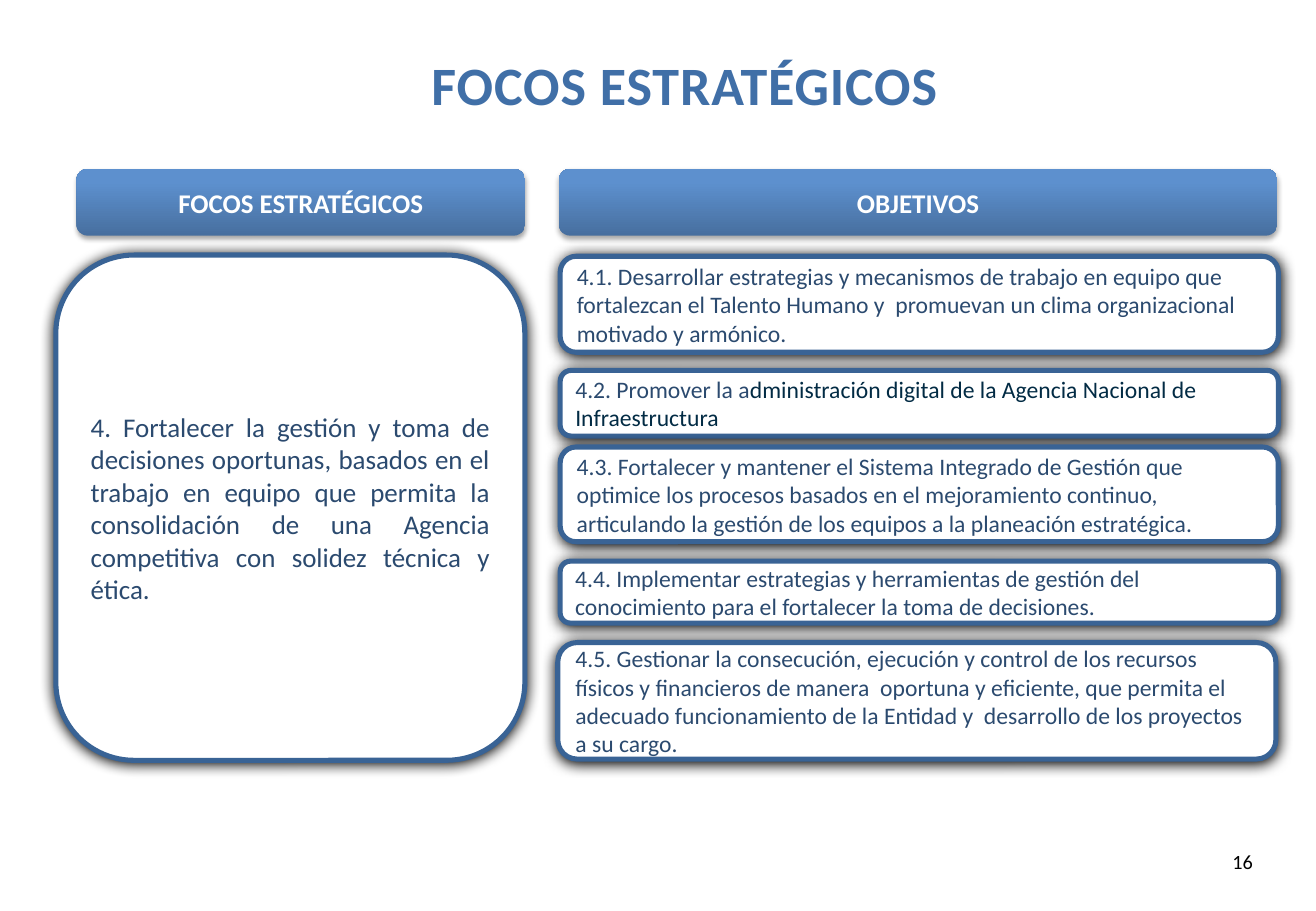
from copy import deepcopy
from dataclasses import dataclass

from lxml import etree
from pptx import Presentation
from pptx import util as u
from pptx.dml.color import RGBColor
from pptx.enum import shapes, text
from pptx.oxml.ns import qn

PX = 9144  # EMU per px, 100 px to the inch


@dataclass(frozen=True)
class Theme:
    font: str = "Calibri"
    title: str = "406FA7"
    body: str = "2B4A6F"
    accent: str = "022B44"
    border: str = "396395"
    white: str = "FFFFFF"
    black: str = "000000"
    gradient: tuple = ((0, "476F9F"), (0.8, "5D90CE"), (1, "5B91D1"))
    title_size: int = 32
    focus_size: int = 16
    objective_size: int = 14
    number_size: int = 12
    border_width: int = 3


@dataclass(frozen=True)
class Box:
    left: int
    top: int
    width: int
    height: int

    def emu(self) -> tuple[int, ...]:
        return tuple(n * PX for n in (self.left, self.top, self.width, self.height))


@dataclass(frozen=True)
class Label:
    words: str
    size: int
    color: str
    align: text.PP_ALIGN = text.PP_ALIGN.LEFT
    bold: bool = False
    ending: str = ""  # closing words in the accent colour


@dataclass(frozen=True)
class Shadow:
    opacity: int
    blur: float
    distance: float


THEME = Theme()
CENTER = text.PP_ALIGN.CENTER
CARD_SHADOW = Shadow(100, 8.5, 1)
HEADER_SHADOW = Shadow(35, 3.1, 1.8)

HEADERS = [
    (Box(63, 139, 369, 55), "FOCOS ESTRATÉGICOS"),
    (Box(460, 139, 591, 55), "OBJETIVOS"),
]

FOCUS = (
    "4. Fortalecer la gestión y toma de decisiones oportunas, basados en el trabajo "
    "en equipo que permita la consolidación de una Agencia competitiva con solidez "
    "técnica y ética."
)

# left, top, height, words, ending in the accent colour
OBJECTIVE_WIDTH = 591
OBJECTIVES = [
    (461, 211, 79,
     "4.1. Desarrollar estrategias y mecanismos de trabajo en equipo que fortalezcan "
     "el Talento Humano y  promuevan un clima organizacional motivado y armónico.", ""),
    (461, 305, 54, "4.2. Promover la a",
     "dministración digital de la Agencia Nacional de Infraestructura"),
    (461, 368, 78,
     "4.3. Fortalecer y mantener el Sistema Integrado de Gestión que optimice los "
     "procesos basados en el mejoramiento continuo,  articulando la gestión de los "
     "equipos a la planeación estratégica.", ""),
    (461, 462, 51,
     "4.4. Implementar estrategias y herramientas de gestión del conocimiento para "
     "el fortalecer la toma de decisiones.", ""),
    (459, 529, 96,
     "4.5. Gestionar la consecución, ejecución y control de los recursos físicos y "
     "financieros de manera  oportuna y eficiente, que permita el adecuado "
     "funcionamiento de la Entidad y  desarrollo de los proyectos a su cargo.", ""),
]


def write(shape, label: Label) -> None:
    frame = shape.text_frame
    frame.word_wrap = True
    frame.vertical_anchor = text.MSO_ANCHOR.MIDDLE
    paragraph = frame.paragraphs[0]
    paragraph.alignment = label.align
    paragraph.font.name = THEME.font
    paragraph.font.size = u.Pt(label.size)
    paragraph.font.bold = label.bold
    for words, color in ((label.words, label.color), (label.ending, THEME.accent)):
        if words:
            run = paragraph.add_run()
            run.text = words
            run.font.color.rgb = RGBColor.from_string(color)


def add_text(slide, box: Box, label: Label):
    shape = slide.shapes.add_textbox(*box.emu())
    write(shape, label)
    return shape


def add_panel(slide, box: Box, label: Label, shadow: Shadow):
    shape = slide.shapes.add_shape(shapes.MSO_SHAPE.ROUNDED_RECTANGLE, *box.emu())
    shape.shadow.inherit = False
    effects = shape._element.spPr.find(qn("a:effectLst"))
    outer = etree.SubElement(
        effects, qn("a:outerShdw"), blurRad=str(int(u.Pt(shadow.blur))),
        dist=str(int(u.Pt(shadow.distance))), dir="5400000", rotWithShape="0")
    color = etree.SubElement(outer, qn("a:srgbClr"), val=THEME.black)
    etree.SubElement(color, qn("a:alpha"), val=str(shadow.opacity * 1000))
    write(shape, label)
    return shape


def add_card(slide, box: Box, label: Label) -> None:
    shape = add_panel(slide, box, label, CARD_SHADOW)
    shape.fill.solid()
    shape.fill.fore_color.rgb = RGBColor.from_string(THEME.white)
    shape.line.color.rgb = RGBColor.from_string(THEME.border)
    shape.line.width = u.Pt(THEME.border_width)


def add_header(slide, box: Box, words: str) -> None:
    label = Label(words, THEME.focus_size, THEME.white, CENTER, bold=True)
    shape = add_panel(slide, box, label, HEADER_SHADOW)
    shape.line.fill.background()
    shape.fill.gradient()
    shape.fill.gradient_angle = 90
    stop_list = shape._element.spPr.find(f".//{qn('a:gsLst')}")
    stop_list.append(deepcopy(stop_list[0]))
    for stop, (position, color) in zip(shape.fill.gradient_stops, THEME.gradient):
        stop.position = position
        stop.color.rgb = RGBColor.from_string(color)


def main() -> None:
    presentation = Presentation()
    presentation.slide_width, presentation.slide_height = 1083 * PX, 750 * PX
    slide = presentation.slides.add_slide(presentation.slide_layouts[6])

    # Title
    title = add_text(slide, Box(22, 37, 1083, 64), Label(
        "FOCOS ESTRATÉGICOS", THEME.title_size, THEME.title, CENTER, bold=True))
    title.text_frame.auto_size = text.MSO_AUTO_SIZE.SHAPE_TO_FIT_TEXT
    title.text_frame.paragraphs[0].runs[0].font._element.set("spc", "50")

    # Column headers
    for box, words in HEADERS:
        add_header(slide, box, words)

    # Strategic focus
    add_card(slide, Box(46, 210, 386, 416), Label(
        FOCUS, THEME.focus_size, THEME.body, text.PP_ALIGN.JUSTIFY))

    # Objectives
    for left, top, height, words, ending in OBJECTIVES:
        add_card(slide, Box(left, top, OBJECTIVE_WIDTH, height), Label(
            words, THEME.objective_size, THEME.body, ending=ending))

    # Slide number
    add_text(slide, Box(761, 689, 280, 40), Label(
        "16", THEME.number_size, THEME.black, text.PP_ALIGN.RIGHT))

    presentation.save("out.pptx")


if __name__ == "__main__":
    main()
